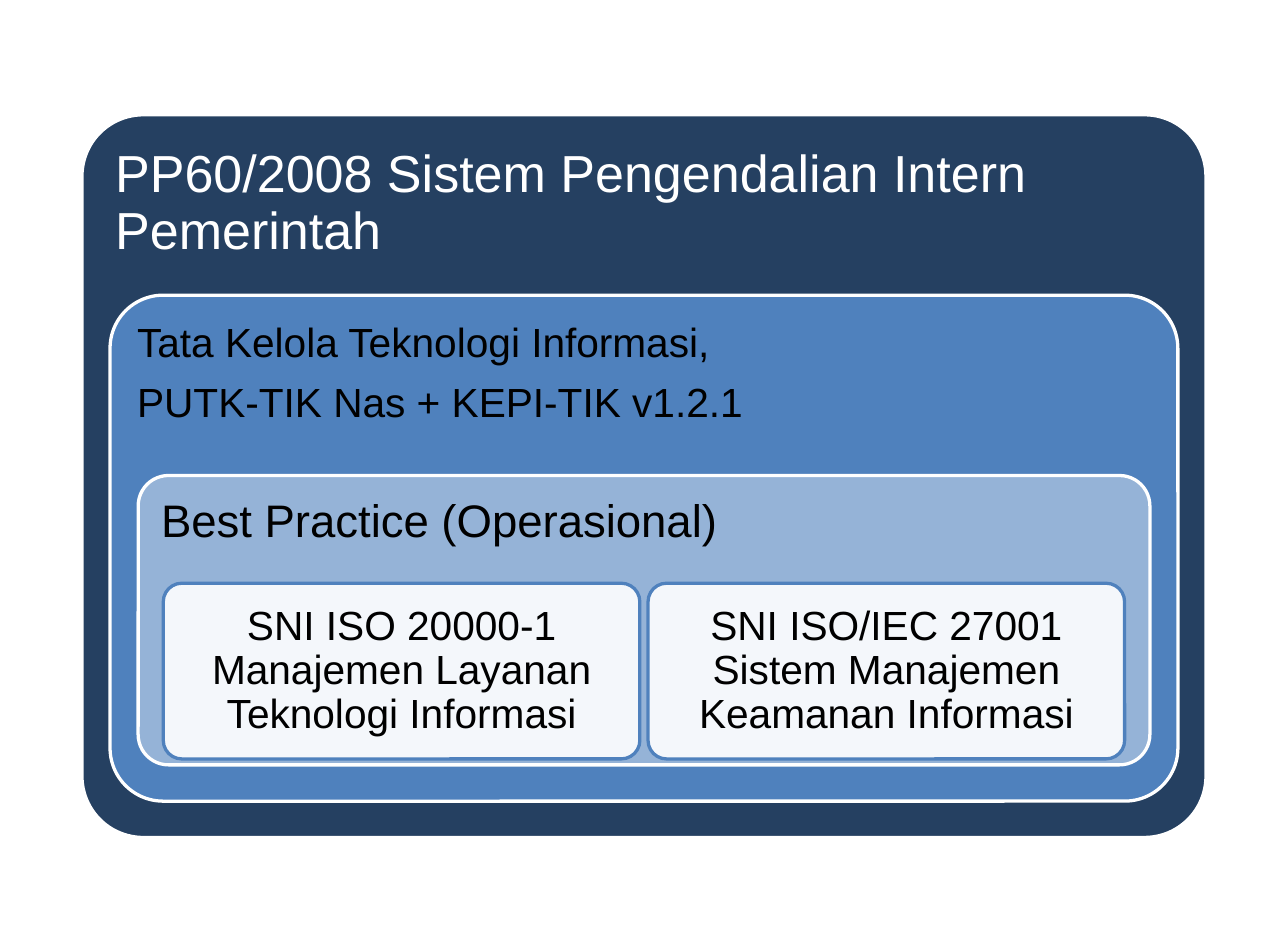
"""Nested governance layers around two operational standards."""
from lxml.etree import SubElement
from pptx import Presentation
from pptx.dml.color import RGBColor
from pptx.enum.shapes import MSO_SHAPE
from pptx.enum.text import MSO_ANCHOR, PP_ALIGN
from pptx.oxml.ns import qn
from pptx.util import Inches, Pt

COLORS = {"navy": "254061", "blue": "4F81BD", "pale": "95B3D7", "white": "FFFFFF", "black": "000000"}

deck = Presentation()
deck.slide_width, deck.slide_height = Inches(11), Inches(8)
page = deck.slides.add_slide(deck.slide_layouts[6])
column, row = deck.slide_width / 100, deck.slide_height / 100


def add_panel(left, top, width, height, corner, fill, line, lines, size, color, margin, anchor, align):
    box = page.shapes.add_shape(MSO_SHAPE.ROUNDED_RECTANGLE, int(left * column), int(top * row),
                                int(width * column), int(height * row))
    box.adjustments[0] = corner
    box.shadow.inherit = False
    box.fill.solid()
    box.fill.fore_color.rgb = RGBColor.from_string(COLORS[fill])
    box.line.color.rgb = RGBColor.from_string(COLORS[line])
    box.line.width = Pt(2)
    frame = box.text_frame
    frame_format = {"word_wrap": True, "vertical_anchor": anchor}
    frame_format |= {f"margin_{side}": Inches(margin) for side in ("left", "top", "right", "bottom")}
    for name, value in frame_format.items():
        setattr(frame, name, value)
    for index, text in enumerate(lines):
        para = frame.add_paragraph() if index else frame.paragraphs[0]
        para_format = {"alignment": align, "line_spacing": 0.9, "space_after": Pt(0.39 * size)}
        for name, value in para_format.items():
            setattr(para, name, value)
        span = para.add_run()
        span.text = text
        for name, value in {"name": "Arial", "size": Pt(size)}.items():
            setattr(span.font, name, value)
        span.font.color.rgb = RGBColor.from_string(COLORS[color])
    return box


first_top, layer_step = 12.25, 19.25
layers = [
    (87.27, 77.13, 0.085, "navy", ["PP60/2008 Sistem Pengendalian Intern Pemerintah"], 32, "white", 0.13),
    (82.91, 54, 0.105, "blue", ["Tata Kelola Teknologi Informasi,", "PUTK-TIK Nas + KEPI-TIK v1.2.1"],
     25, "black", 0.1),
    (78.55, 30.88, 0.105, "pale", ["Best Practice (Operasional)"], 28, "black", 0.12),
]
for index, (width, height, corner, fill, lines, size, color, margin) in enumerate(layers):
    add_panel((100 - width) / 2, first_top + index * layer_step, width, height, corner, fill, "white",
              lines, size, color, margin, MSO_ANCHOR.TOP, PP_ALIGN.LEFT)

standards = [
    "SNI ISO 20000-1 Manajemen Layanan Teknologi Informasi",
    "SNI ISO/IEC 27001 Sistem Manajemen Keamanan Informasi",
]
card_width, card_gap = 37, 0.64
cards_left = (100 - 2 * card_width - card_gap) / 2
for index, standard in enumerate(standards):
    card = add_panel(cards_left + index * (card_width + card_gap), 62.25, card_width, 18.75, 0.105,
                     "white", "blue", [standard], 25, "black", 0.1, MSO_ANCHOR.MIDDLE, PP_ALIGN.CENTER)
    fill_color = card.element.spPr.find(qn("a:solidFill")).find(qn("a:srgbClr"))
    SubElement(fill_color, qn("a:alpha"), val="90000")

deck.save("out.pptx")
